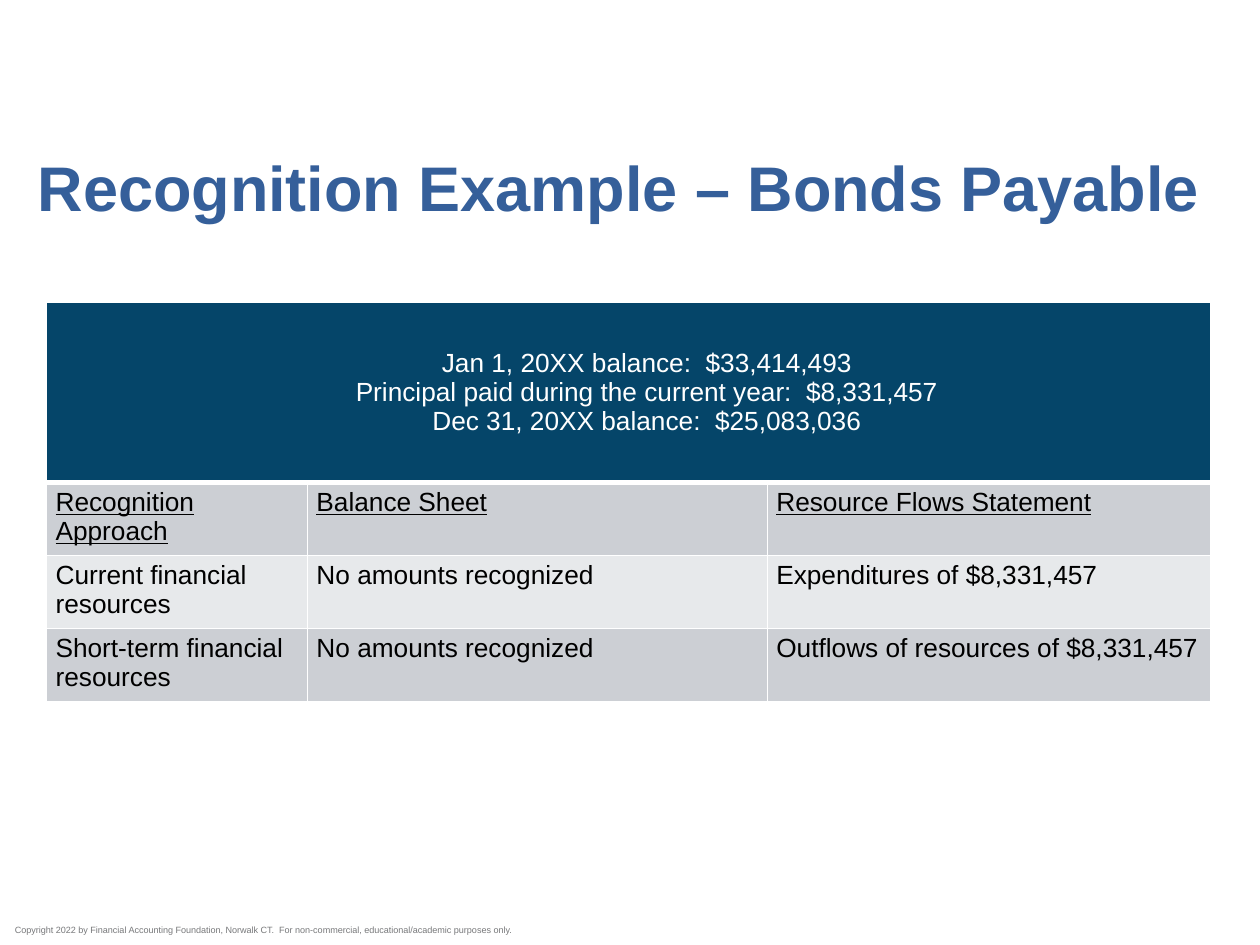
from lxml import etree
from pptx import Presentation
from pptx.dml.color import RGBColor
from pptx.enum import text
from pptx.oxml import ns
from pptx.util import Cm, Pt

NAVY, DARK_BAND, LIGHT_BAND = "054569", "CCCFD4", "E7E9EB"
BALANCES = [
    "Jan 1, 20XX balance:  $33,414,493",
    "Principal paid during the current year:  $8,331,457",
    "Dec 31, 20XX balance:  $25,083,036",
]
ROWS = [
    ["Recognition Approach", "Balance Sheet", "Resource Flows Statement"],
    ["Current financial resources", "No amounts recognized",
     "Expenditures of $8,331,457"],
    ["Short-term financial resources", "No amounts recognized",
     "Outflows of resources of $8,331,457"],
]
COL_WIDTHS = [5.26, 9.27, 8.94]
ROW_HEIGHTS = [3.63, 1.42, 1.42, 1.42]


def rgb(color):
    return RGBColor.from_string(color)


def style_text(tf, size, color, bold=False, underline=False,
               align=text.PP_ALIGN.LEFT):
    for p in tf.paragraphs:
        p.alignment = align
        for r in p.runs:
            r.font.name = "Arial"
            r.font.size = Pt(size)
            r.font.bold = bold
            r.font.underline = underline
            r.font.color.rgb = rgb(color)


def clear_margins(tf):
    tf.margin_left = tf.margin_right = tf.margin_top = tf.margin_bottom = 0
    tf.word_wrap = True


def add_title(s, title):
    sp = s.shapes.title
    sp.left, sp.top, sp.width, sp.height = Cm(0.76), Cm(2.34), Cm(23.47), Cm(2.18)
    tf = sp.text_frame
    tf.text = title
    clear_margins(tf)
    tf.auto_size = text.MSO_AUTO_SIZE.NONE
    tf.vertical_anchor = text.MSO_ANCHOR.BOTTOM
    tf.paragraphs[0].line_spacing = Pt(37)
    style_text(tf, 36, "355F9A", bold=True)


def add_copyright(s, notice):
    sp = s.shapes.add_textbox(Cm(0.3), Cm(18.64), Cm(13.79), Cm(0.36))
    tf = sp.text_frame
    tf.text = notice
    clear_margins(tf)
    style_text(tf, 5.2, "78797B")


def set_borders(cell, bottom=1):
    tcPr = cell._tc.get_or_add_tcPr()
    for side, width in (("L", 1), ("R", 1), ("T", 1), ("B", bottom)):
        ln = etree.SubElement(tcPr, ns.qn(f"a:ln{side}"), w=str(Pt(width)))
        fill = etree.SubElement(ln, ns.qn("a:solidFill"))
        etree.SubElement(fill, ns.qn("a:srgbClr"), val="FFFFFF")


def format_cell(cell, fill, bottom=1):
    cell.margin_left = cell.margin_right = Cm(0.18)
    cell.margin_top = cell.margin_bottom = Cm(0.1)
    set_borders(cell, bottom)
    cell.fill.solid()
    cell.fill.fore_color.rgb = rgb(fill)


def add_recognition_table(s):
    frame = s.shapes.add_table(len(ROW_HEIGHTS), len(COL_WIDTHS), Cm(0.94), Cm(6.1),
                               Cm(sum(COL_WIDTHS)), Cm(sum(ROW_HEIGHTS)))
    table = frame.table
    for col, width in zip(table.columns, COL_WIDTHS):
        col.width = Cm(width)
    for row, height in zip(table.rows, ROW_HEIGHTS):
        row.height = Cm(height)

    for cell in table.rows[0].cells:
        format_cell(cell, NAVY, bottom=3)
    header = table.cell(0, 0)
    header.merge(table.cell(0, len(COL_WIDTHS) - 1))
    header.margin_left = Cm(0.91)
    header.vertical_anchor = text.MSO_ANCHOR.MIDDLE
    header.text_frame.text = "\n".join(BALANCES)
    style_text(header.text_frame, 15, "FFFFFF", align=text.PP_ALIGN.CENTER)

    for i, values in enumerate(ROWS):
        for j, value in enumerate(values):
            cell = table.cell(i + 1, j)
            format_cell(cell, LIGHT_BAND if i % 2 else DARK_BAND)
            cell.text_frame.text = value
            style_text(cell.text_frame, 15, "000000", underline=i == 0)


def main():
    prs = Presentation()
    prs.slide_width, prs.slide_height = Cm(25.4), Cm(19.05)
    s = prs.slides.add_slide(prs.slide_layouts[5])
    add_copyright(s, "Copyright 2022 by Financial Accounting Foundation, Norwalk CT.  "
                     "For non-commercial, educational/academic purposes only.")
    add_title(s, "Recognition Example – Bonds Payable")
    add_recognition_table(s)
    prs.save("out.pptx")


if __name__ == "__main__":
    main()
